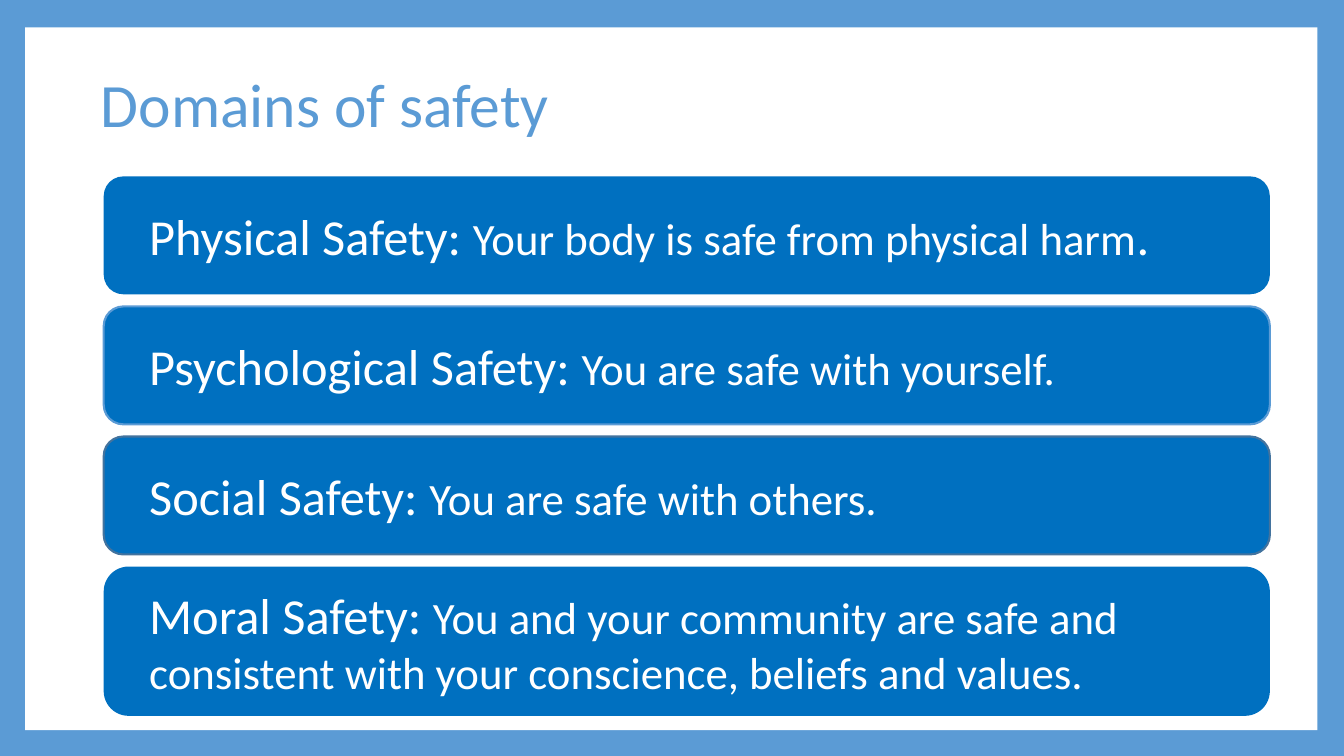
from dataclasses import dataclass

import pptx
import pptx.dml.color
import pptx.enum.shapes
import pptx.enum.text
import pptx.util

Pt = pptx.util.Pt
Shapes = pptx.enum.shapes.MSO_SHAPE
Anchor = pptx.enum.text.MSO_ANCHOR


@dataclass(frozen=True)
class Theme:
    font: str = "Calibri"
    frame: str = "5B9BD5"
    paper: str = "FFFFFF"
    card: str = "0070C0"
    dark_edge: str = "43739E"
    title_size: float = 44
    domain_size: float = 36
    meaning_size: float = 32
    edge_width: float = 1.5


THEME = Theme()
CARD_GAP = 8.65
TEXT_INDENT = 25.4

DOMAINS = [
    (84.25, 800.6, 51.1, None,
     [("Physical Safety: ", THEME.domain_size),
      ("Your body is safe from physical harm", THEME.meaning_size),
      (".", THEME.domain_size)]),
    (84.25, 738.7, 51.1, THEME.frame,
     [("Psychological Safety: ", THEME.domain_size),
      ("You are safe with yourself.", THEME.meaning_size)]),
    (84.25, 738.7, 51.1, THEME.dark_edge,
     [("Social Safety: ", THEME.domain_size),
      ("You are safe with others.", THEME.meaning_size)]),
    (106.6, 786, 90, None,
     [("Moral Safety: ", THEME.domain_size),
      ("You and your community are safe and consistent with your "
       "conscience, beliefs and values.", THEME.meaning_size)]),
]


def rgb(colour):
    return pptx.dml.color.RGBColor.from_string(colour)


def add_panel(slide, kind, box, fill, edge=None):
    panel = slide.shapes.add_shape(kind, *map(Pt, box))
    panel.shadow.inherit = False
    panel.fill.solid()
    panel.fill.fore_color.rgb = rgb(fill)
    if edge:
        panel.line.color.rgb = rgb(edge)
        panel.line.width = Pt(THEME.edge_width)
    else:
        panel.line.fill.background()


def add_words(slide, box, colour):
    frame = slide.shapes.add_textbox(*map(Pt, box)).text_frame
    frame.word_wrap = True
    frame.vertical_anchor = Anchor.MIDDLE
    words = frame.paragraphs[0]
    words.font.name = THEME.font
    words.font.color.rgb = rgb(colour)
    return words


def add_background(slide, box):
    slide.background.fill.solid()
    slide.background.fill.fore_color.rgb = rgb(THEME.frame)
    add_panel(slide, Shapes.RECTANGLE, box, THEME.paper)


def add_title(slide, box):
    title = add_words(slide, box, THEME.frame)
    title.text = "Domains of safety"
    title.font.size = Pt(THEME.title_size)
    title.line_spacing = 0.9


def add_domain(slide, box, text_width, text_height, edge, phrases):
    left, top, width, height = box
    add_panel(slide, Shapes.ROUNDED_RECTANGLE, box, THEME.card, edge)
    text_top = top + (height - text_height) / 2
    text_box = (left + TEXT_INDENT, text_top, text_width, text_height)
    statement = add_words(slide, text_box, THEME.paper)
    for phrase, size in phrases:
        run = statement.add_run()
        run.text = phrase
        run.font.size = Pt(size)


def add_domains(slide, left, top, width):
    for height, text_width, text_height, edge, phrases in DOMAINS:
        card_box = (left, top, width, height)
        add_domain(slide, card_box, text_width, text_height, edge, phrases)
        top += height + CARD_GAP


def main():
    deck = pptx.Presentation()
    deck.slide_width, deck.slide_height = Pt(960), Pt(540)
    slide = deck.slides.add_slide(deck.slide_layouts[6])
    add_background(slide, (18, 19.5, 923, 502))
    add_title(slide, (65, 31.7, 773.3, 90))
    add_domains(slide, 74.1, 126, 833)
    deck.save("out.pptx")


if __name__ == "__main__":
    main()
